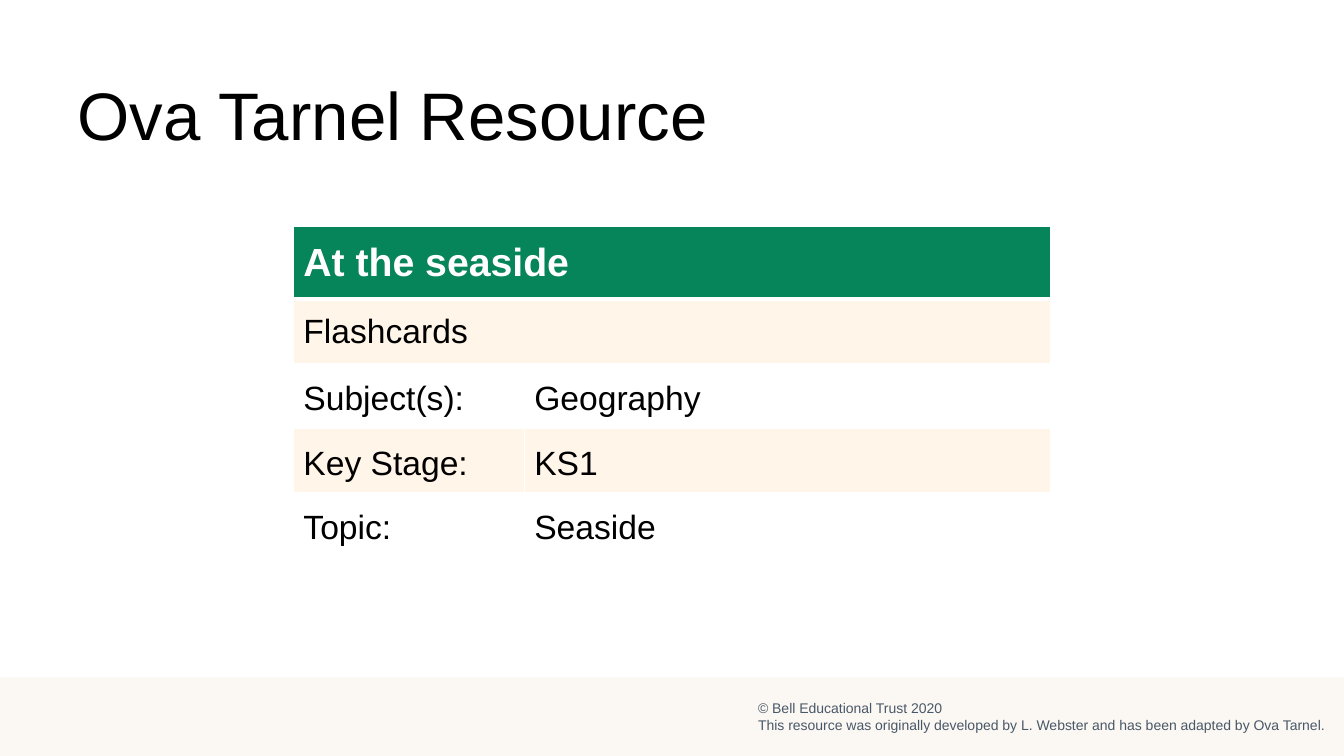
from lxml import etree
from pptx import Presentation
from pptx.dml.color import RGBColor
from pptx.enum.shapes import MSO_SHAPE
from pptx.enum.text import MSO_ANCHOR, PP_ALIGN
from pptx.oxml.ns import qn
from pptx.util import Inches, Pt

RECTANGLE = MSO_SHAPE.RECTANGLE
MIDDLE = MSO_ANCHOR.MIDDLE
LEFT = PP_ALIGN.LEFT
TITLE_ONLY = 5

WHITE, BLACK = "FFFFFF", "000000"
GREEN, CREAM = "06845A", "FFF5E8"
FOOTER_FILL, FOOTER_TEXT = "FBF7F3", "495868"

HEADING = "At the seaside"
RESOURCE_TYPE = "Flashcards"
DETAILS = [("Subject(s):", "Geography"), ("Key Stage:", "KS1"), ("Topic:", "Seaside")]
FOOTER = [
    "© Bell Educational Trust 2020",
    "This resource was originally developed by L. Webster and has been adapted by Ova Tarnel.",
]


def color(value):
    return RGBColor.from_string(value)


class SlideBuilder:
    def __init__(self, slide, font_name):
        self.slide = slide
        self.font_name = font_name

    def style_text(self, text_frame, size, text_color, bold=False):
        for paragraph in text_frame.paragraphs:
            paragraph.alignment = LEFT
            for run in paragraph.runs:
                run.font.name = self.font_name
                run.font.size = Pt(size)
                run.font.bold = bold
                run.font.color.rgb = color(text_color)

    def title(self, text, left, top, width, height, size):
        shape = self.slide.shapes.title
        shape.left, shape.top = Inches(left), Inches(top)
        shape.width, shape.height = Inches(width), Inches(height)
        shape.text_frame.text = text
        shape.text_frame.word_wrap = False
        shape.text_frame.vertical_anchor = MIDDLE
        self.style_text(shape.text_frame, size, BLACK)

    def band(self, left, top, width, height, fill):
        shape = self.slide.shapes.add_shape(
            RECTANGLE, Inches(left), Inches(top), Inches(width), Inches(height))
        shape.shadow.inherit = False
        shape.fill.solid()
        shape.fill.fore_color.rgb = color(fill)
        shape.line.fill.background()

    def text(self, lines, left, top, width, height, size, text_color):
        box = self.slide.shapes.add_textbox(
            Inches(left), Inches(top), Inches(width), Inches(height))
        box.text_frame.text = "\n".join(lines)
        box.text_frame.word_wrap = True
        self.style_text(box.text_frame, size, text_color)

    def table(self, left, top, column_widths, row_heights):
        table = self.slide.shapes.add_table(
            len(row_heights), len(column_widths), Inches(left), Inches(top),
            Inches(sum(column_widths)), Inches(sum(row_heights))).table
        for column, width in zip(table.columns, column_widths):
            column.width = Inches(width)
        for row, height in zip(table.rows, row_heights):
            row.height = Inches(height)
        return table

    def cell(self, cell, text, fill, size=24, text_color=BLACK, bold=False):
        cell.text_frame.text = text
        cell.vertical_anchor = MIDDLE
        cell.fill.solid()
        cell.fill.fore_color.rgb = color(fill)
        self.style_text(cell.text_frame, size, text_color, bold)

    def borders(self, cell, top=1, bottom=1):
        """Draw white cell borders, with widths in points."""
        properties = cell._tc.get_or_add_tcPr()
        sides = {"a:lnL": 1, "a:lnR": 1, "a:lnT": top, "a:lnB": bottom}
        for position, (tag, width) in enumerate(sides.items()):
            line = etree.Element(qn(tag), w=str(Pt(width)))
            fill = etree.SubElement(line, qn("a:solidFill"))
            etree.SubElement(fill, qn("a:srgbClr"), val=WHITE)
            properties.insert(position, line)


def main():
    presentation = Presentation()
    presentation.slide_width = Inches(13.33)
    presentation.slide_height = Inches(7.5)
    slide = presentation.slides.add_slide(presentation.slide_layouts[TITLE_ONLY])
    builder = SlideBuilder(slide, "Arial")

    builder.band(0, 6.72, 13.33, 0.78, FOOTER_FILL)
    builder.text(FOOTER, 7.42, 6.89, 5.85, 0.44, 10, FOOTER_TEXT)
    builder.title("Ova Tarnel Resource", 0.67, 0.67, 6.62, 0.91, 48)

    table = builder.table(2.91, 2.25, [2.29, 5.22], [0.72] + [0.64] * 4)
    for row in range(2):
        table.cell(row, 0).merge(table.cell(row, 1))
    builder.cell(table.cell(0, 0), HEADING, GREEN, 28, WHITE, True)
    builder.cell(table.cell(1, 0), RESOURCE_TYPE, CREAM)
    for row, details in enumerate(DETAILS, start=2):
        for column, text in enumerate(details):
            cell = table.cell(row, column)
            builder.cell(cell, text, CREAM if row % 2 else WHITE)
            paragraph = cell.text_frame.paragraphs[0]
            paragraph.line_spacing = 1.15
            paragraph.space_after = Pt(10)
    for row in range(len(table.rows)):
        for column in range(len(table.columns)):
            builder.borders(table.cell(row, column),
                            top=3 if row == 1 else 1, bottom=3 if row == 0 else 1)

    presentation.save("out.pptx")


if __name__ == "__main__":
    main()
